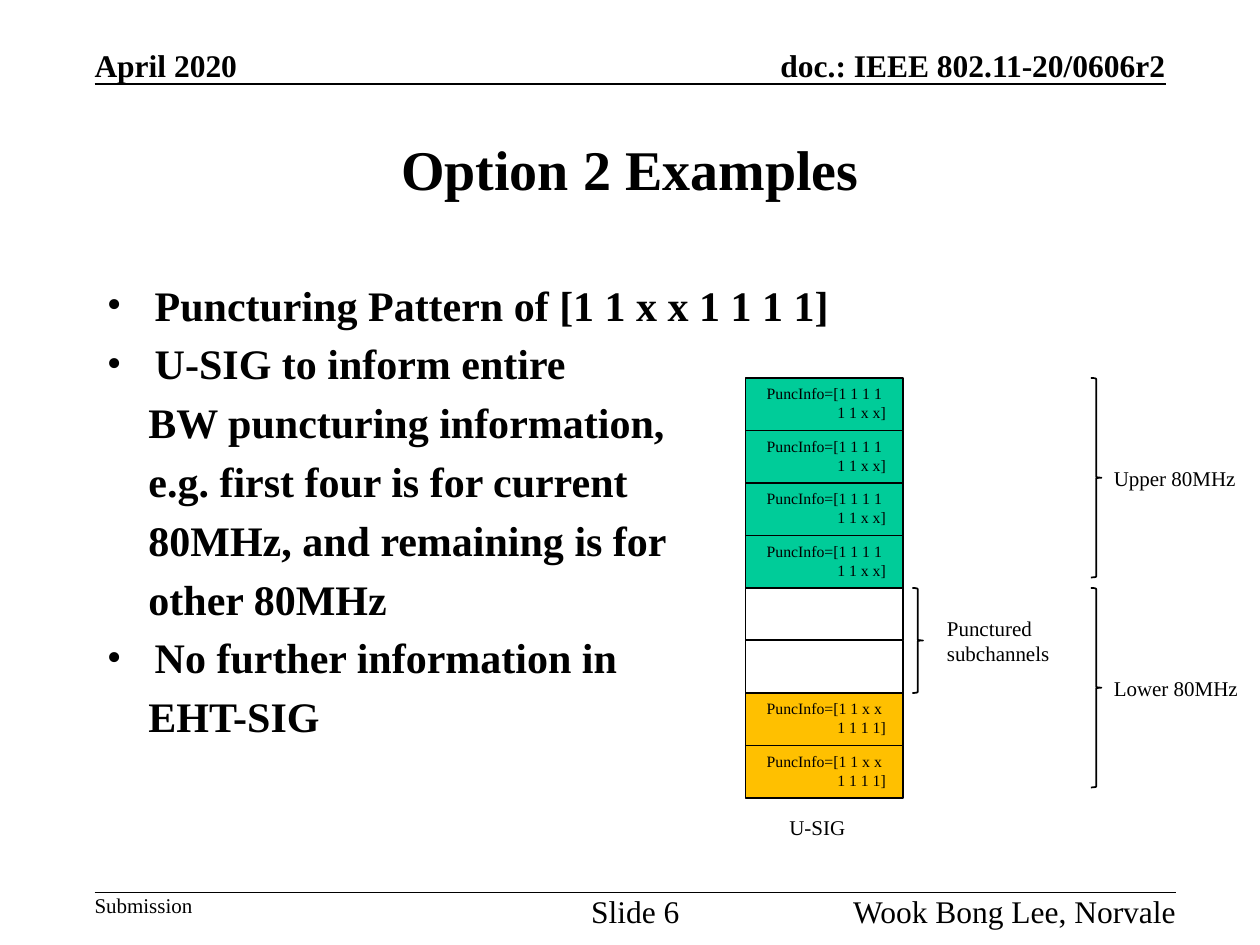
from collections import namedtuple
from dataclasses import dataclass

import pptx
import pptx.dml.color
import pptx.enum.shapes
import pptx.enum.text
import pptx.oxml.ns
import pptx.util
from lxml import etree

ALIGN = pptx.enum.text.PP_ALIGN
ANCHOR = pptx.enum.text.MSO_ANCHOR
SHAPE = pptx.enum.shapes.MSO_SHAPE
Box = namedtuple("Box", "left top width height")


@dataclass(frozen=True)
class Theme:
    font: str = "Times New Roman"
    ink: str = "000000"
    upper: str = "00CC99"
    lower: str = "FFC000"
    title: int = 32
    body: int = 24
    running: int = 18
    label: int = 12
    cell: int = 9
    rule: int = 1


THEME = Theme()


def grid(count):
    """Length of a number of columns or rows; the 10 x 7.5 inch page has 120 x 90."""
    return pptx.util.Inches(count / 12)


def color(value):
    return pptx.dml.color.RGBColor.from_string(value)


def place(shape, box):
    shape.left, shape.top, shape.width, shape.height = map(grid, box)


def write(para, text, size, bold=False, align=ALIGN.LEFT):
    para.alignment = align
    span = para.add_run()
    span.text = text
    span.font.name = THEME.font
    span.font.size = pptx.util.Pt(size)
    span.font.bold = bold
    span.font.color.rgb = color(THEME.ink)


def indent(para, left, hanging=0, bullet=None):
    """Set the left margin in inches, with a hanging bullet if one is given."""
    properties = para._p.get_or_add_pPr()
    properties.set("marL", str(pptx.util.Inches(left)))
    properties.set("indent", str(-pptx.util.Inches(hanging)))
    if bullet:
        font = etree.SubElement(properties, pptx.oxml.ns.qn("a:buFont"))
        font.set("typeface", THEME.font)
        mark = etree.SubElement(properties, pptx.oxml.ns.qn("a:buChar"))
        mark.set("char", bullet)
    else:
        etree.SubElement(properties, pptx.oxml.ns.qn("a:buNone"))


def add_text(page, box, *lines, size=THEME.label, bold=False, align=ALIGN.LEFT,
             anchor=ANCHOR.TOP, wrap=True, inset=True):
    shape = page.shapes.add_textbox(*map(grid, box))
    frame = shape.text_frame
    frame.word_wrap = wrap
    frame.vertical_anchor = anchor
    if not inset:
        frame.margin_left = frame.margin_right = 0
        frame.margin_top = frame.margin_bottom = 0
    for index, line in enumerate(lines):
        para = frame.add_paragraph() if index else frame.paragraphs[0]
        write(para, line, size, bold, align)
    return frame


def add_outline(page, kind, box, fill=None):
    shape = page.shapes.add_shape(kind, *map(grid, box))
    shape.shadow.inherit = False
    if fill:
        shape.fill.solid()
        shape.fill.fore_color.rgb = color(fill)
    else:
        shape.fill.background()
    shape.line.color.rgb = color(THEME.ink)
    shape.line.width = pptx.util.Pt(THEME.rule)


def add_rule(page, left, right, row):
    kind = pptx.enum.shapes.MSO_CONNECTOR.STRAIGHT
    rule = page.shapes.add_connector(kind, grid(left), grid(row), grid(right), grid(row))
    rule.line.color.rgb = color(THEME.ink)
    rule.line.width = pptx.util.Pt(THEME.rule)
    etree.SubElement(rule._element.spPr, pptx.oxml.ns.qn("a:effectLst"))


def add_header(page, box):
    for text, align, share in (("April 2020", ALIGN.LEFT, 0.14),
                               ("doc.: IEEE 802.11-20/0606r2", ALIGN.RIGHT, 0.42)):
        width = box.width * share
        left = box.left if align == ALIGN.LEFT else box.left + box.width - width
        add_text(page, Box(left, box.top, width, box.height), text, size=THEME.running,
                 bold=True, align=align, anchor=ANCHOR.BOTTOM, wrap=False, inset=False)
    add_rule(page, box.left, box.left + box.width, box.top + box.height)


def add_footer(page, box):
    add_rule(page, box.left, box.left + box.width, box.top)
    third = box.width / 3
    for column, text, size, align in (
            (0, "Submission", THEME.label, ALIGN.LEFT),
            (1, "Slide 6", THEME.running, ALIGN.CENTER),
            (2, "Wook Bong Lee, Norvale", THEME.running, ALIGN.RIGHT)):
        add_text(page, Box(box.left + column * third, box.top, third, box.height), text,
                 size=size, align=align, inset=False)


def add_title(page, box):
    title = page.shapes.title
    place(title, box)
    title.text_frame.vertical_anchor = ANCHOR.MIDDLE
    write(title.text_frame.paragraphs[0], "Option 2 Examples", THEME.title, True, ALIGN.CENTER)


def add_points(page, box):
    points = (
        ("Puncturing Pattern of [1 1 x x 1 1 1 1]",),
        ("U-SIG to inform entire", "BW puncturing information,",
         "e.g. first four is for current", "80MHz, and remaining is for", "other 80MHz"),
        ("No further information in", "EHT-SIG"),
    )
    lines = [line for point in points for line in point]
    heads = {point[0] for point in points}
    frame = add_text(page, box, *lines, size=THEME.body, bold=True)
    for index, (para, line) in enumerate(zip(frame.paragraphs, lines)):
        para.space_before = pptx.util.Pt(4.8 if index else 0)
        if line in heads:
            indent(para, 0.38, hanging=0.38, bullet="•")
        else:
            indent(para, 0.33)


def add_brace(page, box, *label, gap=0, width=15.1):
    """Draw a brace with its label centred beside the tip."""
    add_outline(page, SHAPE.RIGHT_BRACE, box)
    height = 1.2 + 2.4 * len(label)
    middle = box.top + box.height / 2
    add_text(page, Box(box.left + box.width + gap, middle - height / 2, width, height),
             *label, anchor=ANCHOR.MIDDLE)


def add_subchannels(page, box):
    upper = (THEME.upper, "1 1 1 1", "1 1 x x")
    lower = (THEME.lower, "1 1 x x", "1 1 1 1")
    cells = [upper] * 4 + [None] * 2 + [lower] * 2
    row = box.height / len(cells)
    for index, cell in enumerate(cells):
        area = Box(box.left, box.top + index * row, box.width, row)
        add_outline(page, SHAPE.RECTANGLE, area, cell[0] if cell else None)
        if cell:
            frame = add_text(page, area, f"PuncInfo=[{cell[1]}", f"{cell[2]}]",
                             size=THEME.cell, align=ALIGN.CENTER)
            frame.paragraphs[1].alignment = ALIGN.LEFT
            indent(frame.paragraphs[1], 0.63)

    right = box.left + box.width
    half = box.top + 4 * row
    add_text(page, Box(box.left + 3, box.top + box.height + 1, 8.8, 3.6), "U-SIG")
    add_brace(page, Box(right + 0.9, half, 1, 2 * row), "Punctured", "subchannels",
              gap=1.1, width=12.8)
    for top, label in ((box.top, "Upper 80MHz"), (half, "Lower 80MHz")):
        add_brace(page, Box(right + 17.9, top, 1, 4 * row - 1), label)


def main():
    deck = pptx.Presentation()
    deck.slide_width, deck.slide_height = grid(120), grid(90)
    page = deck.slides.add_slide(deck.slide_layouts[5])
    add_header(page, Box(9, 4.4, 102, 3.6))
    add_footer(page, Box(9, 85, 103, 3.6))
    add_title(page, Box(9, 9, 102, 14))
    add_points(page, Box(9, 26, 102, 54))
    add_subchannels(page, Box(71, 36, 15, 40))
    deck.save("out.pptx")


if __name__ == "__main__":
    main()
